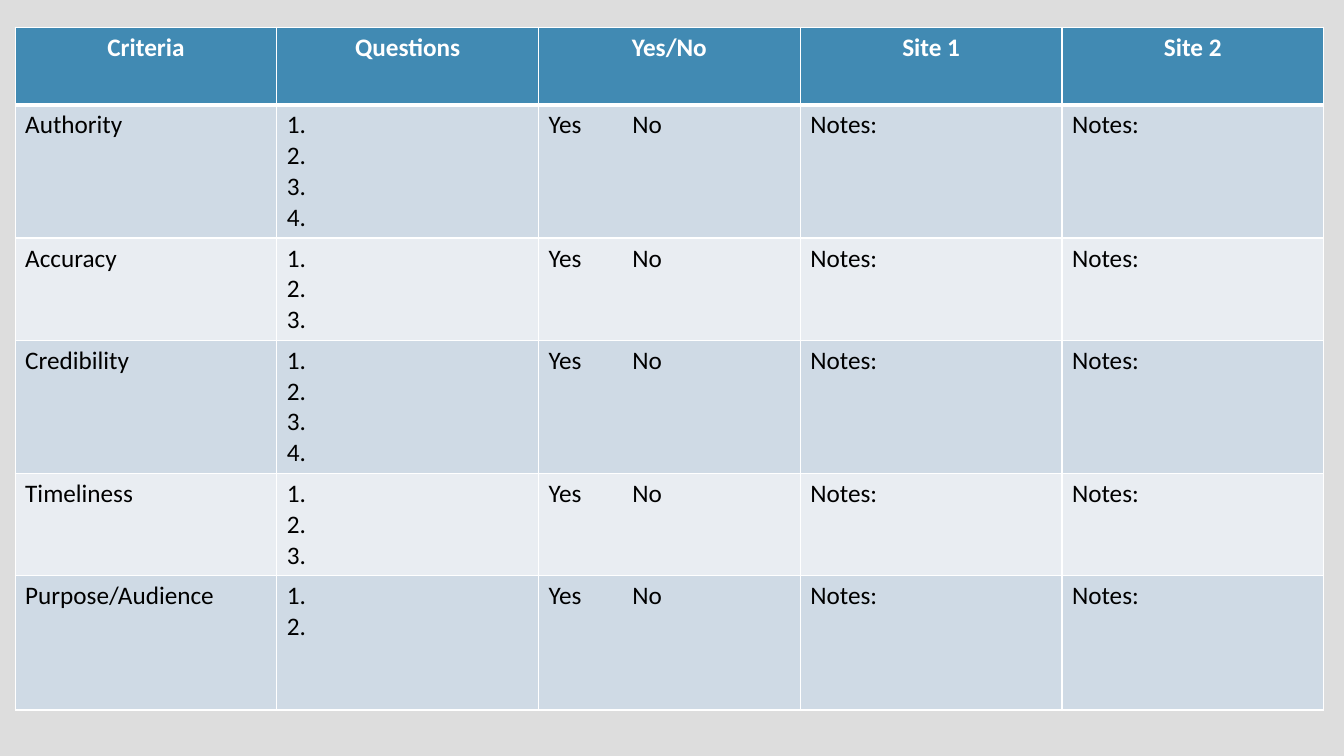
from lxml import etree
from pptx import Presentation
from pptx.dml.color import RGBColor
from pptx.enum.text import PP_ALIGN
from pptx.oxml.ns import qn
from pptx.util import Inches, Pt

CENTER = PP_ALIGN.CENTER
LEFT = PP_ALIGN.LEFT

WHITE = "FFFFFF"
HEADER_FILL = "418AB3"
BAND_FILLS = ["CFDAE5", "E9EDF2"]
HEADERS = ["Criteria", "Questions", "Yes/No", "Site 1", "Site 2"]
CRITERIA = [
    ("Authority", 4, 1.13),
    ("Accuracy", 3, 0.87),
    ("Credibility", 4, 1.13),
    ("Timeliness", 3, 0.87),
    ("Purpose/Audience", 2, 1.33),
]


def rgb(value):
    return RGBColor.from_string(value)


def write(tf, text, color="000000", bold=False, align=LEFT, tab=None):
    for i, line in enumerate(text.split("\n")):
        p = tf.add_paragraph() if i else tf.paragraphs[0]
        p.alignment = align
        if tab:
            tabs = etree.SubElement(p._p.get_or_add_pPr(), qn("a:tabLst"))
            etree.SubElement(tabs, qn("a:tab"), pos=str(tab), algn="l")
        r = p.add_run()
        r.text = line
        r.font.name = "Calibri"
        r.font.size = Pt(18)
        r.font.bold = bold
        r.font.color.rgb = rgb(color)


prs = Presentation()
prs.slide_width = Inches(13.33)
prs.slide_height = Inches(7.5)
s = prs.slides.add_slide(prs.slide_layouts[6])
s.background.fill.solid()
s.background.fill.fore_color.rgb = rgb("DDDDDD")

rows = [HEADERS]
for name, count, height in CRITERIA:
    questions = "\n".join(f"{n}." for n in range(1, count + 1))
    rows.append([name, questions, "Yes\tNo", "Notes:", "Notes:"])
heights = [0.77] + [height for name, count, height in CRITERIA]

frame = s.shapes.add_table(len(rows), len(HEADERS), Inches(0.15), Inches(0.27),
                           Inches(12.98), Inches(6.7))
table = frame.table

for i, (row, height) in enumerate(zip(rows, heights)):
    table.rows[i].height = Inches(height)
    for j, text in enumerate(row):
        cell = table.cell(i, j)
        tcPr = cell._tc.get_or_add_tcPr()
        for side in "LRTB":
            thick = (i, side) in [(0, "B"), (1, "T")]
            ln = etree.SubElement(tcPr, qn(f"a:ln{side}"), w=str(Pt(3 if thick else 1)))
            fill = etree.SubElement(ln, qn("a:solidFill"))
            etree.SubElement(fill, qn("a:srgbClr"), val=WHITE)
        cell.fill.solid()
        if i == 0:
            cell.fill.fore_color.rgb = rgb(HEADER_FILL)
            write(cell.text_frame, text, color=WHITE, bold=True, align=CENTER)
        else:
            cell.fill.fore_color.rgb = rgb(BAND_FILLS[(i - 1) % 2])
            write(cell.text_frame, text, tab=Inches(0.83) if "\t" in text else None)

frame.height = Inches(6.7)

prs.save("out.pptx")
